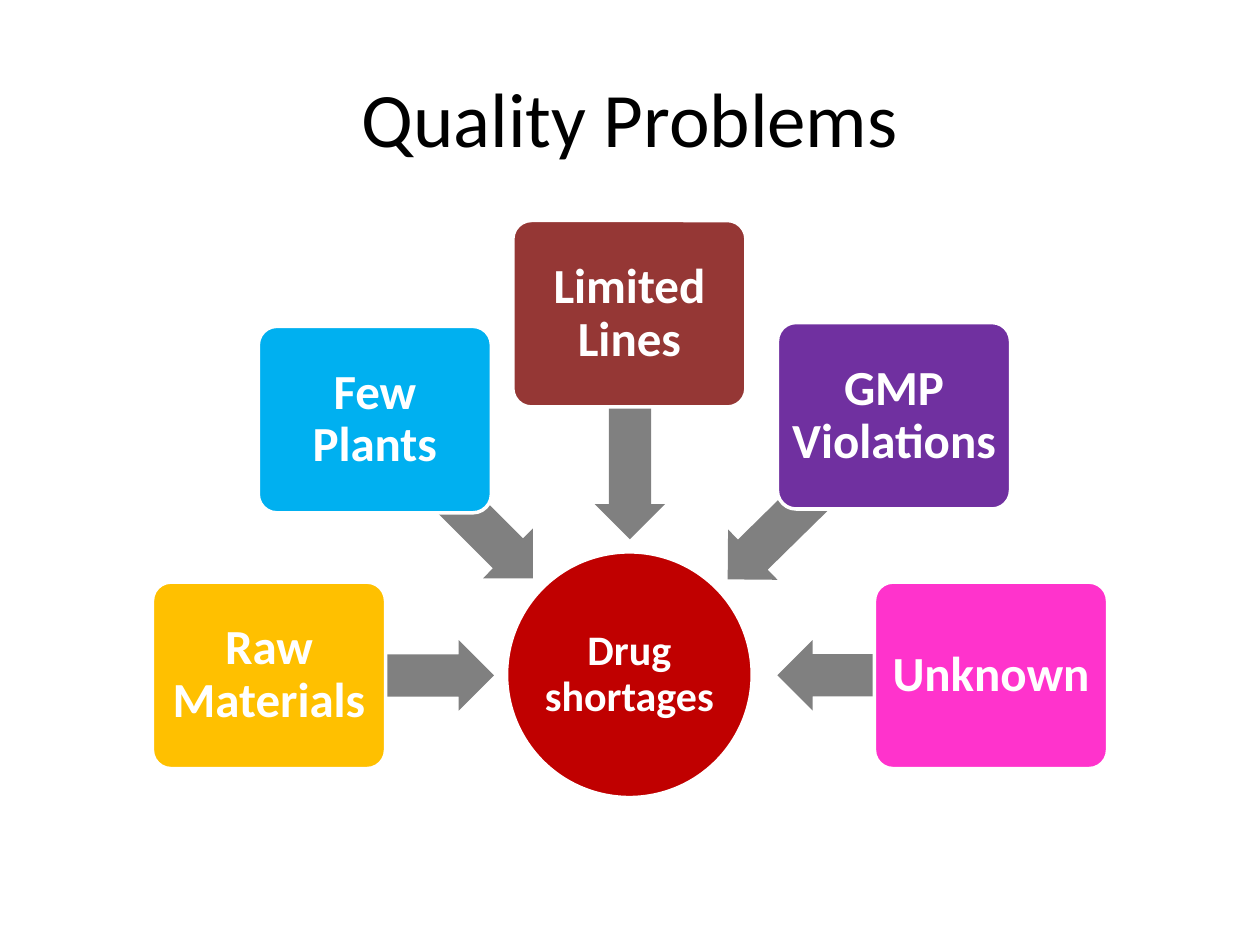
from pptx import Presentation
from pptx.dml.color import RGBColor
from pptx.enum.shapes import MSO_SHAPE
from pptx.enum.text import MSO_ANCHOR, PP_ALIGN
from pptx.util import Inches, Pt

BLACK = RGBColor(0x00, 0x00, 0x00)
WHITE = RGBColor(0xFF, 0xFF, 0xFF)
GREY = RGBColor(0x80, 0x80, 0x80)
RED = RGBColor(0xC0, 0x00, 0x00)
AMBER = RGBColor(0xFF, 0xC0, 0x00)
BLUE = RGBColor(0x00, 0xB0, 0xF0)
BROWN = RGBColor(0x95, 0x37, 0x35)
PURPLE = RGBColor(0x70, 0x30, 0xA0)
PINK = RGBColor(0xFF, 0x33, 0xCC)

CAUSE_WIDTH, CAUSE_HEIGHT = 1.85, 1.48
ARROW_HEIGHT = 0.56

# Cause, colour, box left and top, arrow left, top, width and rotation
CAUSES = [
    ("Raw Materials", AMBER, (1.21, 4.62), (2.14, 5.08, 1.78, 180)),
    ("Few Plants", BLUE, (2.05, 2.59), (2.71, 3.68, 1.78, 225)),
    ("Limited Lines", BROWN, (4.07, 1.75), (4.11, 3.11, 1.78, 270)),
    ("GMP Violations", PURPLE, (6.17, 2.56), (5.51, 3.67, 1.85, 315.5)),
    ("Unknown", PINK, (6.94, 4.62), (6.17, 5.08, 1.78, 0)),
]


def write_text(shape, text, size, color=WHITE, bold=True, spacing=0.9, inset=0.1):
    frame = shape.text_frame
    frame.word_wrap = True
    frame.vertical_anchor = MSO_ANCHOR.MIDDLE
    frame.margin_left = frame.margin_right = Inches(inset)
    frame.margin_top = frame.margin_bottom = Inches(inset)
    paragraph = frame.paragraphs[0]
    paragraph.alignment = PP_ALIGN.CENTER
    paragraph.line_spacing = spacing
    run = paragraph.add_run()
    run.text = text
    run.font.name = "Calibri"
    run.font.size = Pt(size)
    run.font.bold = bold
    run.font.color.rgb = color


def add_filled(slide, preset, left, top, width, height, color, outlined=True):
    shape = slide.shapes.add_shape(
        preset, Inches(left), Inches(top), Inches(width), Inches(height))
    shape.shadow.inherit = False
    shape.fill.solid()
    shape.fill.fore_color.rgb = color
    if outlined:
        shape.line.color.rgb = WHITE
        shape.line.width = Pt(2)
    else:
        shape.line.fill.background()
    return shape


def add_arrow(slide, left, top, width, rotation):
    arrow = add_filled(slide, MSO_SHAPE.LEFT_ARROW, left, top, width,
                       ARROW_HEIGHT, GREY, outlined=False)
    arrow.adjustments[0] = 0.6
    arrow.adjustments[1] = 0.5
    arrow.rotation = rotation


def add_cause(slide, text, color, left, top):
    cause = add_filled(slide, MSO_SHAPE.ROUNDED_RECTANGLE, left, top,
                       CAUSE_WIDTH, CAUSE_HEIGHT, color)
    cause.adjustments[0] = 0.1
    # The rounded corners already hold the text in from the sides
    write_text(cause, text, size=28, inset=0.04)


def main():
    presentation = Presentation()
    presentation.slide_width = Inches(10)
    presentation.slide_height = Inches(7.5)
    slide = presentation.slides.add_slide(presentation.slide_layouts[6])

    # Title
    title = slide.shapes.add_textbox(Inches(0.5), Inches(0.3), Inches(9), Inches(1.25))
    write_text(title, "Quality Problems", size=44, color=BLACK, bold=False, spacing=1.0)

    # Central effect
    shortages = add_filled(slide, MSO_SHAPE.OVAL, 4.02, 4.38, 1.95, 1.95, RED)
    write_text(shortages, "Drug shortages", size=24, inset=0)

    # Causes, each box in front of its arrow
    for text, color, box_place, arrow_place in CAUSES:
        add_arrow(slide, *arrow_place)
        add_cause(slide, text, color, *box_place)

    presentation.save("out.pptx")


if __name__ == "__main__":
    main()
